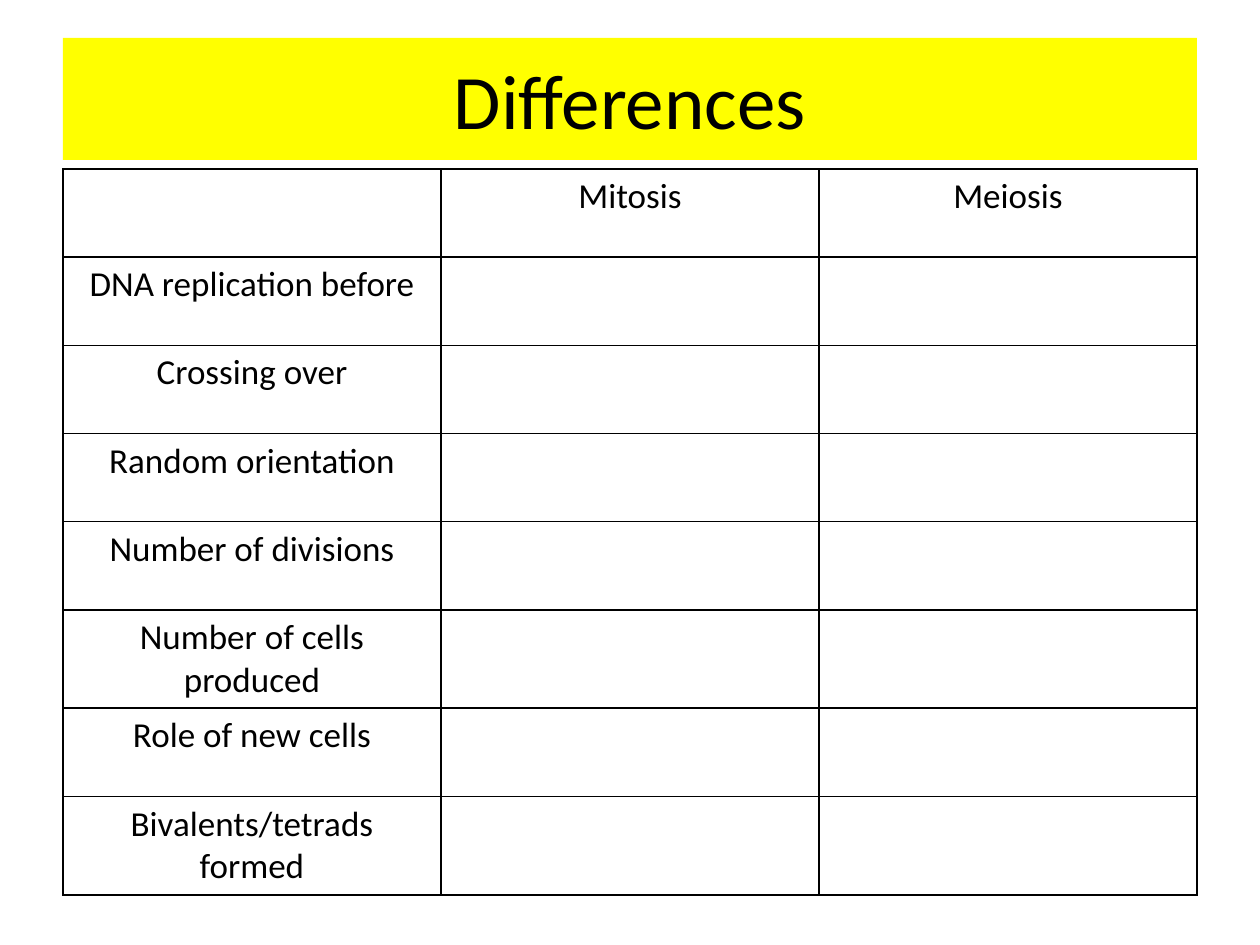
"""Build a slide with a table comparing mitosis and meiosis."""
from dataclasses import dataclass

from lxml.etree import SubElement
from pptx import Presentation
from pptx.dml.color import RGBColor
from pptx.enum.shapes import MSO_SHAPE
from pptx.enum.text import MSO_ANCHOR, PP_ALIGN
from pptx.oxml.ns import qn
from pptx.util import Inches, Pt


@dataclass(frozen=True)
class Theme:
    font: str = "Calibri"
    ink: str = "000000"
    band: str = "FFFF00"
    title: int = 44
    body: int = 20
    rule: int = 1


class Board:
    def __init__(self, slide, theme):
        self.slide = slide
        self.theme = theme

    def label(self, frame, text, size):
        para = frame.paragraphs[0]
        para.alignment = PP_ALIGN.CENTER
        run = para.add_run()
        run.text = text
        run.font.name = self.theme.font
        run.font.size = Pt(size)
        run.font.color.rgb = RGBColor.from_string(self.theme.ink)

    def title(self, text, left, top, width, height):
        shape = self.slide.shapes.add_shape(
            MSO_SHAPE.RECTANGLE, left, top, width, height)
        shape.shadow.inherit = False
        shape.fill.solid()
        shape.fill.fore_color.rgb = RGBColor.from_string(self.theme.band)
        shape.line.fill.background()
        shape.text_frame.word_wrap = True
        shape.text_frame.vertical_anchor = MSO_ANCHOR.MIDDLE
        self.label(shape.text_frame, text, self.theme.title)

    def border(self, cell):
        props = cell._tc.get_or_add_tcPr()
        for index, side in enumerate(("lnL", "lnR", "lnT", "lnB")):
            line = props.makeelement(
                qn(f"a:{side}"), {"w": str(Pt(self.theme.rule))})
            fill = SubElement(line, qn("a:solidFill"))
            SubElement(fill, qn("a:srgbClr"), val=self.theme.ink)
            props.insert(index, line)

    def table(self, heads, topics, left, top, width, pitch):
        rows = [heads] + [[topic] + [""] * (len(heads) - 1) for topic in topics]
        grid = self.slide.shapes.add_table(
            len(rows), len(heads), left, top, width, pitch * len(rows)).table
        grid.first_row = False
        grid.horz_banding = False
        for y, row in enumerate(rows):
            for x, text in enumerate(row):
                cell = grid.cell(y, x)
                cell.fill.background()
                self.border(cell)
                if text:
                    self.label(cell.text_frame, text, self.theme.body)


def main():
    deck = Presentation()
    deck.slide_width, deck.slide_height = Inches(10), Inches(7.5)
    board = Board(deck.slides.add_slide(deck.slide_layouts[6]), Theme())
    left, width = Inches(0.5), Inches(9)
    board.title("Differences", left, Inches(0.3), width, Inches(0.97))
    heads = ["", "Mitosis", "Meiosis"]
    topics = [
        "DNA replication before",
        "Crossing over",
        "Random orientation",
        "Number of divisions",
        "Number of cells produced",
        "Role of new cells",
        "Bivalents/tetrads formed",
    ]
    board.table(heads, topics, left, Inches(1.34), width, Inches(0.7))
    deck.save("out.pptx")


if __name__ == "__main__":
    main()
